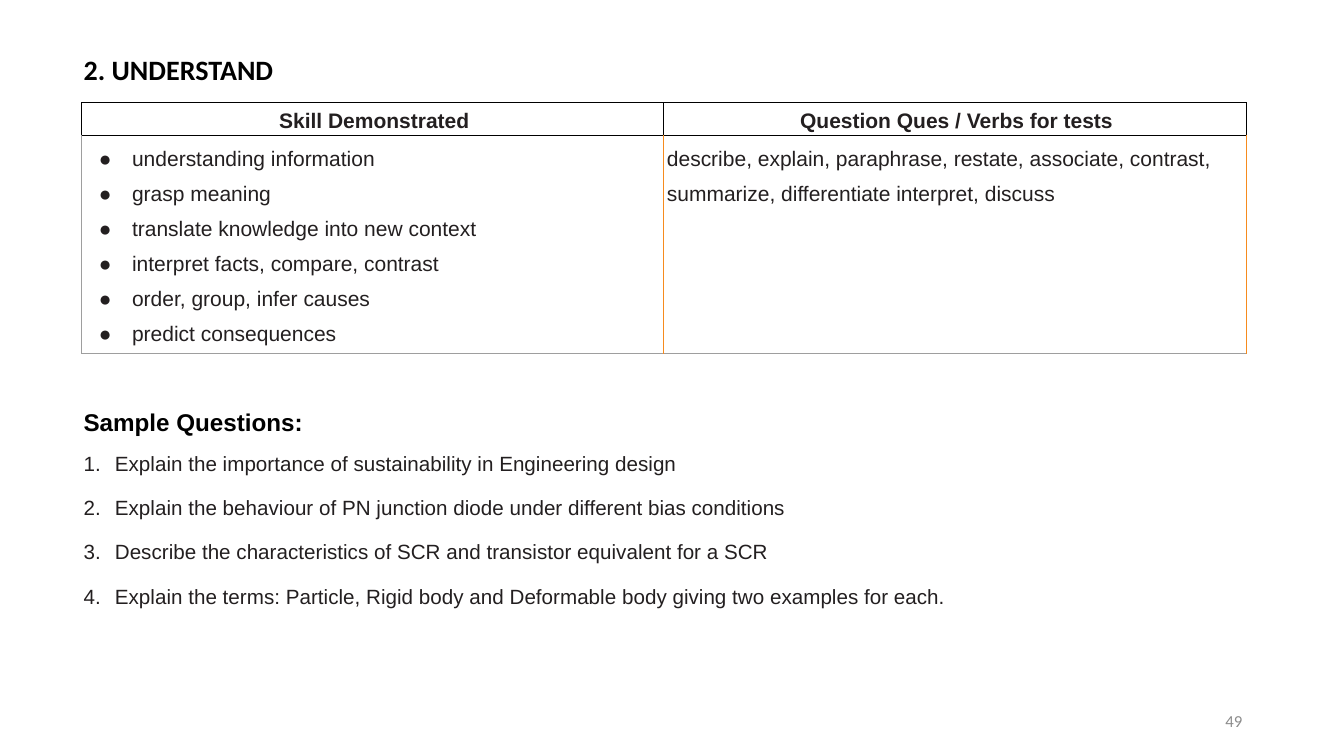
from lxml import etree
from pptx import Presentation
from pptx.dml.color import RGBColor
from pptx.enum.text import MSO_ANCHOR, MSO_AUTO_SIZE, PP_ALIGN
from pptx.oxml.ns import qn
from pptx.util import Inches, Pt

LEFT, CENTER, RIGHT = PP_ALIGN.LEFT, PP_ALIGN.CENTER, PP_ALIGN.RIGHT
TOP, MIDDLE = MSO_ANCHOR.TOP, MSO_ANCHOR.MIDDLE
NO_FIT = MSO_AUTO_SIZE.NONE
BLACK = RGBColor(0x00, 0x00, 0x00)
INK = RGBColor(0x23, 0x1F, 0x20)
ORANGE = RGBColor(0xF6, 0x8B, 0x1E)
BORDER_GRAY = RGBColor(0x9E, 0x9E, 0x9E)
NUMBER_GRAY = RGBColor(0x8C, 0x8C, 0x8C)

PAGE_WIDTH, PAGE_HEIGHT = 13.33, 7.5
MARGIN = 0.81
HEADINGS = ["Skill Demonstrated", "Question Ques / Verbs for tests"]
SKILLS = [
    "understanding information",
    "grasp meaning",
    "translate knowledge into new context",
    "interpret facts, compare, contrast",
    "order, group, infer causes",
    "predict consequences",
]
VERBS = ["describe, explain, paraphrase, restate, associate, contrast, "
         "summarize, differentiate interpret, discuss"]
QUESTIONS = [
    "Explain the importance of sustainability in Engineering design",
    "Explain the behaviour of PN junction diode under different bias conditions",
    "Describe the characteristics of SCR and transistor equivalent for a SCR",
    "Explain the terms: Particle, Rigid body and Deformable body giving two examples for each.",
]


def set_insets(target, top):
    """Clear the insets of a text frame or cell, keeping only the top one."""
    target.margin_left = target.margin_right = target.margin_bottom = 0
    target.margin_top = Inches(top)


def format_para(para, size, color, font="Arial", bold=False, align=LEFT,
                spacing=1.0, before=0):
    """Format one paragraph and its runs."""
    para.alignment = align
    para.line_spacing = spacing
    para.space_before = Pt(before)
    for span in para.runs:
        span.font.name = font
        span.font.size = Pt(size)
        span.font.bold = bold
        span.font.color.rgb = color


def set_indent(para, left, hanging=0.0, marker=None, **attributes):
    """Indent a paragraph and give it an optional list marker."""
    properties = para._p.get_or_add_pPr()
    properties.set("marL", str(Inches(left)))
    properties.set("indent", str(Inches(-hanging)))
    if marker:
        color = etree.SubElement(properties, qn("a:buClr"))
        etree.SubElement(color, qn("a:srgbClr"), val=str(INK))
        etree.SubElement(properties, qn("a:buFont"), typeface="Arial")
        etree.SubElement(properties, qn(marker), **attributes)


def set_borders(cell, left, right, top, bottom):
    """Draw the four borders of a cell in the given colours."""
    properties = cell._tc.get_or_add_tcPr()
    for side, color in zip("LRTB", (left, right, top, bottom)):
        line = etree.SubElement(properties, qn(f"a:ln{side}"), w=str(Pt(0.75)))
        fill = etree.SubElement(line, qn("a:solidFill"))
        etree.SubElement(fill, qn("a:srgbClr"), val=str(color))


def add_heading(page, left, top, width, height):
    """Place the slide title in the given box."""
    title = page.shapes.title
    title.left, title.top = Inches(left), Inches(top)
    title.width, title.height = Inches(width), Inches(height)
    frame = title.text_frame
    frame.text = "2. UNDERSTAND"
    frame.auto_size = NO_FIT
    frame.vertical_anchor = TOP
    set_insets(frame, 0.02)
    format_para(frame.paragraphs[0], 20, BLACK, "Calibri", bold=True)
    set_indent(frame.paragraphs[0], 0.02)


def add_skill_table(page, left, top, width, header_height, body_height):
    """Place the table of skills and verbs."""
    table = page.shapes.add_table(
        2, 2, Inches(left), Inches(top), Inches(width),
        Inches(header_height + body_height)).table
    table.first_row = table.horz_banding = False
    table.rows[0].height = Inches(header_height)
    table.rows[1].height = Inches(body_height)
    for column, heading in enumerate(HEADINGS):
        table.columns[column].width = Inches(width / 2)
        header, body = table.cell(0, column), table.cell(1, column)
        header.text = heading
        header.vertical_anchor = MIDDLE
        set_insets(header, 0.02)
        format_para(header.text_frame.paragraphs[0], 15, INK, bold=True,
                    align=CENTER, spacing=1.15)
        set_indent(header.text_frame.paragraphs[0], 0.03)
        set_borders(header, BLACK, BLACK, BLACK, BLACK)

        body.text = "\n".join((SKILLS, VERBS)[column])
        set_insets(body, 0.01)
        for para in body.text_frame.paragraphs:
            format_para(para, 15, INK, spacing=1.5)
            if column == 0:
                set_indent(para, 0.5, 0.33, "a:buChar", char="●")
            else:
                set_indent(para, 0.03)
        set_borders(body, (BORDER_GRAY, ORANGE)[column], ORANGE, BLACK, BORDER_GRAY)
        header.fill.background()
        body.fill.background()


def add_text_box(page, left, top, width, height, text):
    """Add a wrapping text box and return its frame."""
    box = page.shapes.add_textbox(Inches(left), Inches(top), Inches(width), Inches(height))
    frame = box.text_frame
    frame.word_wrap = True
    frame.text = text
    return frame


def add_questions(page, left, top, width, height):
    """Place the numbered sample questions under their heading."""
    frame = add_text_box(page, left, top, width, height,
                         "\n".join(["Sample Questions:"] + QUESTIONS))
    set_insets(frame, 0.12)
    heading, *questions = frame.paragraphs
    format_para(heading, 17.3, BLACK, bold=True, spacing=1.15)
    set_indent(heading, 0.02)
    for index, para in enumerate(questions):
        format_para(para, 14.7, INK, spacing=1.15, before=11.3 if index else 7.5)
        set_indent(para, 0.33, 0.31, "a:buAutoNum", type="arabicPeriod")


def add_page_number(page, left, top, width, height):
    """Place the page number at the lower right."""
    frame = add_text_box(page, left, top, width, height, "49")
    frame.vertical_anchor = MIDDLE
    format_para(frame.paragraphs[0], 12, NUMBER_GRAY, "Calibri", align=RIGHT)


def main():
    """Build the slide and save the deck."""
    deck = Presentation()
    deck.slide_width, deck.slide_height = Inches(PAGE_WIDTH), Inches(PAGE_HEIGHT)
    page = deck.slides.add_slide(deck.slide_layouts[5])
    add_heading(page, MARGIN, 0.5, 3.65, 0.32)
    add_skill_table(page, MARGIN, 1.02, 11.55, 0.32, 2.17)
    add_questions(page, MARGIN, 3.88, 10.97, 2.36)
    add_page_number(page, 9.42, 6.95, 3, 0.4)
    deck.save("out.pptx")


if __name__ == "__main__":
    main()
